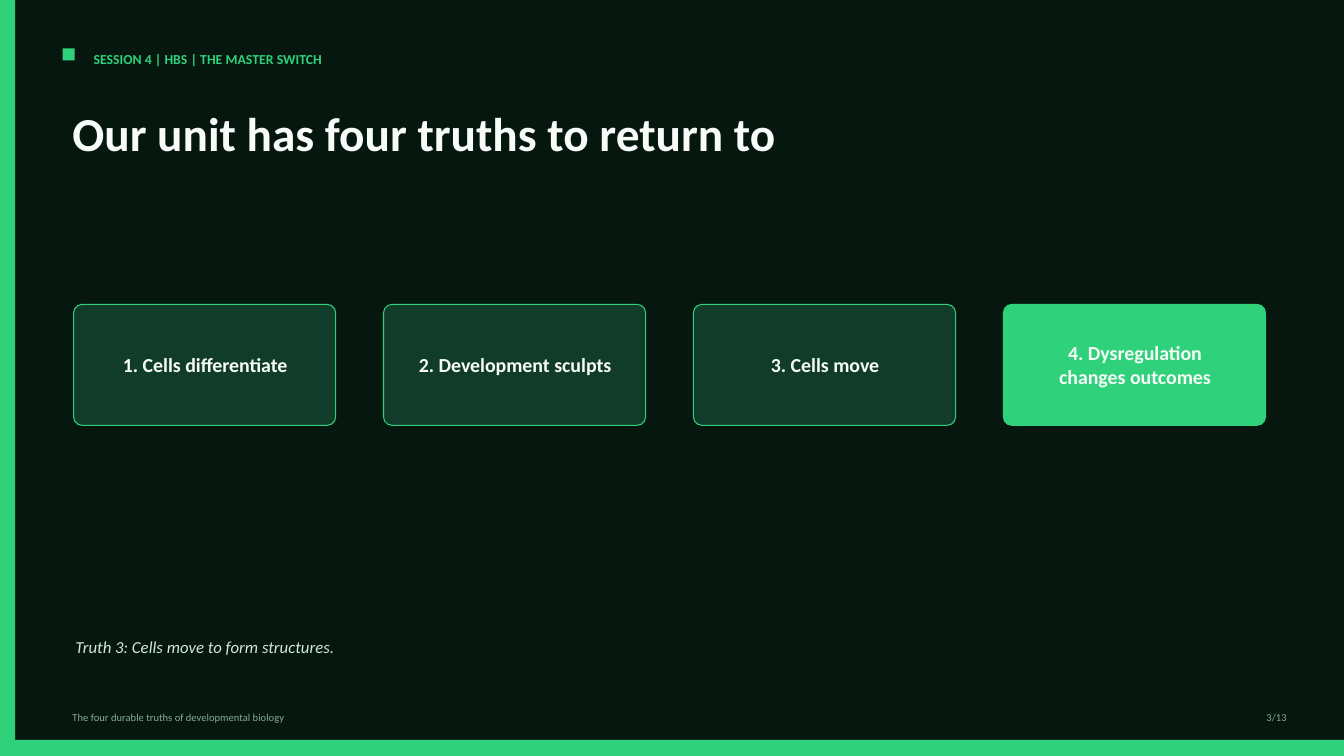
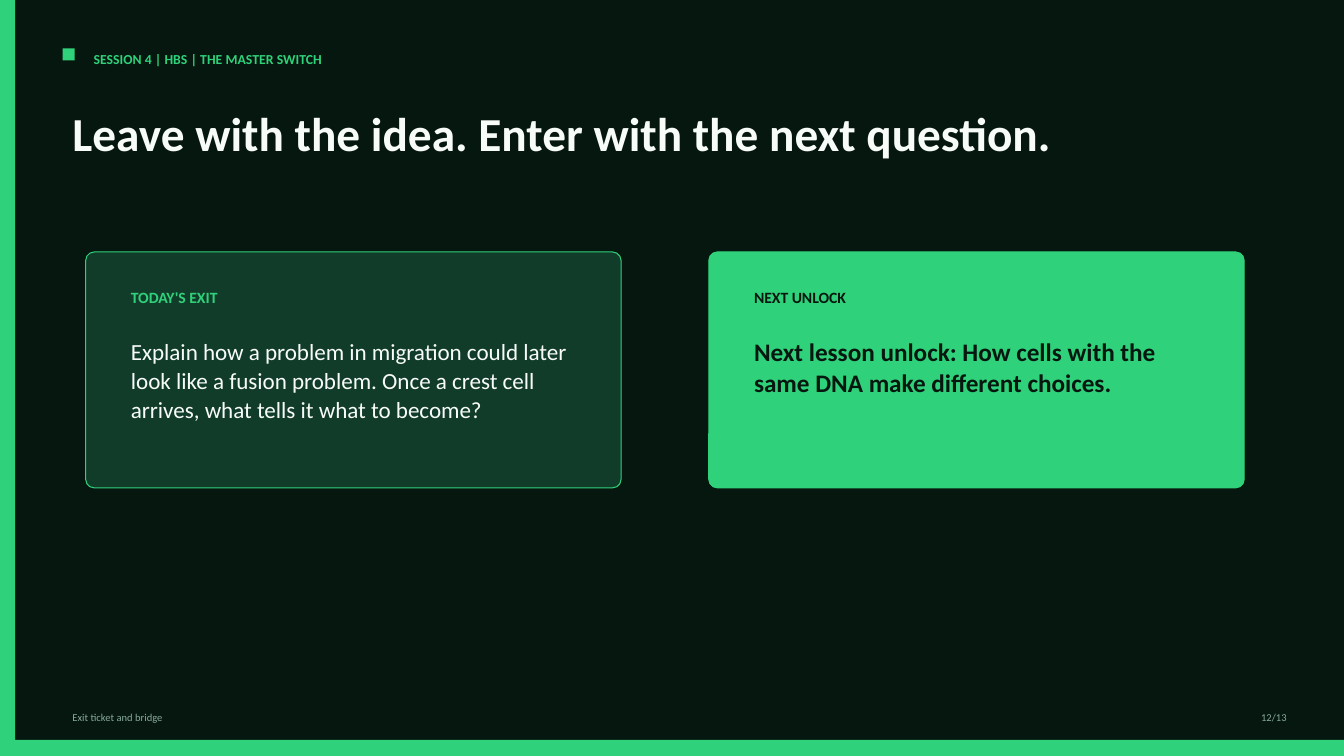
from pptx import Presentation, util as u
from pptx.dml.color import RGBColor
from pptx.enum import shapes, text

Inches = u.Inches
DARK = RGBColor(0x06, 0x17, 0x0F)
GREEN = RGBColor(0x2F, 0xD2, 0x7A)
PANEL = RGBColor(0x12, 0x3C, 0x2A)
WHITE = RGBColor(0xF7, 0xFC, 0xF9)
MINT = RGBColor(0xCD, 0xE9, 0xDA)
MUTED = RGBColor(0x87, 0xAB, 0x9A)
FONT = "Calibri"
WIDE, HIGH = 13.33, 7.5
PAGES = 13
LEFT, MID, RIGHT = text.PP_ALIGN.LEFT, text.PP_ALIGN.CENTER, text.PP_ALIGN.RIGHT
TOP, CENTER = text.MSO_ANCHOR.TOP, text.MSO_ANCHOR.MIDDLE


def write(slide, box, words, size, color, bold=False, italic=False,
          align=LEFT, anchor=TOP, space=1.0):
    """Place one paragraph in a wrapping text box."""
    frame = slide.shapes.add_textbox(*map(Inches, box)).text_frame
    frame.word_wrap = True
    frame.vertical_anchor = anchor
    para = frame.paragraphs[0]
    para.text = words
    para.alignment = align
    para.line_spacing = space
    font = para.font
    font.name, font.size = FONT, u.Pt(size)
    font.bold, font.italic = bold, italic
    font.color.rgb = color


def block(slide, box, fill, round_by=None):
    """Place a plain band, or an outlined card with rounded corners."""
    kind = shapes.MSO_SHAPE
    shape = slide.shapes.add_shape(
        kind.ROUNDED_RECTANGLE if round_by else kind.RECTANGLE,
        *map(Inches, box))
    shape.shadow.inherit = False
    shape.fill.solid()
    shape.fill.fore_color.rgb = fill
    if round_by:
        shape.adjustments[0] = round_by
        shape.line.color.rgb = GREEN
        shape.line.width = u.Pt(0.75)
    else:
        shape.line.fill.background()


def base(deck, title, foot, page):
    """Add a slide with the shared bands, header, title and footer."""
    slide = deck.slides.add_slide(deck.slide_layouts[6])
    back = slide.background.fill
    back.solid()
    back.fore_color.rgb = DARK
    for box in ((0, 0, 0.15, HIGH), (0, 7.34, WIDE, 0.16),
                (0.62, 0.48, 0.12, 0.12)):
        block(slide, box, GREEN)
    write(slide, (0.83, 0.45, 6.46, 0.25),
          "SESSION 4 | HBS | THE MASTER SWITCH", 9.8, GREEN, bold=True)
    write(slide, (0.62, 7, 9.38, 0.19), foot, 7.5, MUTED)
    write(slide, (12.03, 7, 0.83, 0.19), f"{page}/{PAGES}", 7.5, MUTED,
          align=RIGHT)
    write(slide, (0.62, 1.04, 11.46, 0.88), title, 33.8, WHITE, bold=True,
          space=0.92)
    return slide


def truth(slide, box, words, fill):
    """Place a card with one centred line of thought."""
    left, top, width, height = box
    block(slide, box, fill, 0.07)
    write(slide, (left + 0.23, top + 0.21, width - 0.45, height - 0.42),
          words, 14.2, WHITE, bold=True, align=MID, anchor=CENTER)


def panel(slide, box, fill, label, tint, words, size, color, bold, space):
    """Place a card with a small label above its body text."""
    left, top, width, height = box
    block(slide, box, fill, 0.036)
    inner, room = left + 0.35, width - 0.62
    write(slide, (inner, top + 0.31, room, 0.26), label, 11.2, tint, bold=True)
    write(slide, (inner, top + 0.78, room, height - 1.19), words, size, color,
          bold=bold, space=space)


def truths(deck):
    """Build the slide of four truths, with the last one lit."""
    slide = base(deck, "Our unit has four truths to return to",
                 "The four durable truths of developmental biology", 3)
    names = ("Cells differentiate", "Development sculpts", "Cells move",
             "Dysregulation changes outcomes")
    for i, name in enumerate(names):
        fill = GREEN if i == len(names) - 1 else PANEL
        truth(slide, (0.73 + i * 3.074, 3.02, 2.6, 1.2), f"{i + 1}. {name}", fill)
    write(slide, (0.65, 6.25, 11.25, 0.46),
          "Truth 3: Cells move to form structures.", 12, MINT, italic=True,
          space=1.1)


def bridge(deck):
    """Build the closing slide with its exit and next-step cards."""
    slide = base(deck, "Leave with the idea. Enter with the next question.",
                 "Exit ticket and bridge", 12)
    cards = (
        (PANEL, "TODAY'S EXIT", GREEN,
         "Explain how a problem in migration could later look like a fusion "
         "problem. Once a crest cell arrives, what tells it what to become?",
         16.5, WHITE, False, 1.06),
        (GREEN, "NEXT UNLOCK", DARK,
         "Next lesson unlock: How cells with the same DNA make different "
         "choices.", 18, DARK, True, 1.02))
    for i, card in enumerate(cards):
        panel(slide, (0.85 + i * 6.18, 2.5, 5.31, 2.34), *card)


def main():
    """Build and save the deck."""
    deck = Presentation()
    deck.slide_width, deck.slide_height = Inches(WIDE), Inches(HIGH)
    truths(deck)
    bridge(deck)
    deck.save("out.pptx")


if __name__ == "__main__":
    main()
